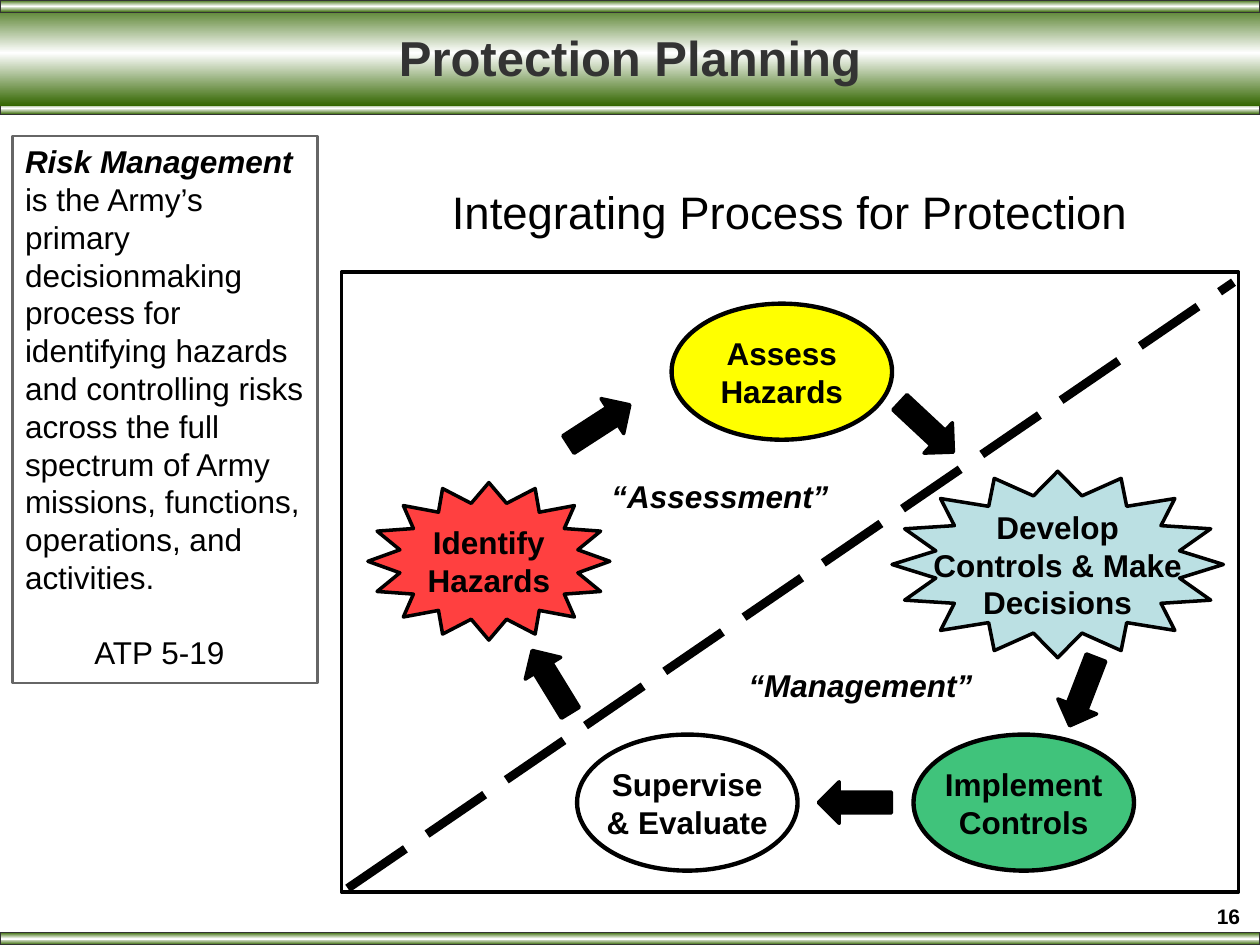
from copy import deepcopy
from dataclasses import dataclass

from lxml import etree
from pptx import Presentation
from pptx.dml.color import RGBColor
from pptx.enum.dml import MSO_LINE
from pptx.enum.shapes import MSO_CONNECTOR, MSO_SHAPE
from pptx.enum.text import MSO_ANCHOR, PP_ALIGN
from pptx.oxml.ns import qn
from pptx.util import Inches, Pt

RECTANGLE, ELLIPSE = MSO_SHAPE.RECTANGLE, MSO_SHAPE.OVAL
STAR, ARROW = MSO_SHAPE.STAR_16_POINT, MSO_SHAPE.DOWN_ARROW
LEFT, CENTER = PP_ALIGN.LEFT, PP_ALIGN.CENTER
TOP, MIDDLE = MSO_ANCHOR.TOP, MSO_ANCHOR.MIDDLE
TITLE_ONLY = 5

BLACK = RGBColor(0x00, 0x00, 0x00)
WHITE = RGBColor(0xFF, 0xFF, 0xFF)
DARK_GREY = RGBColor(0x33, 0x33, 0x33)
GREY = RGBColor(0x66, 0x66, 0x66)
DARK_GREEN = RGBColor(0x33, 0x66, 0x00)
YELLOW = RGBColor(0xFF, 0xFF, 0x00)
RED = RGBColor(0xFF, 0x00, 0x00)
GREEN = RGBColor(0x00, 0xB0, 0x50)
PALE_BLUE = RGBColor(0xBB, 0xE0, 0xE3)

PLAIN = {"name": "Arial", "size": Pt(18), "bold": False, "italic": False}
BOLD = {**PLAIN, "bold": True}
BOLD_ITALIC = {**BOLD, "italic": True}


@dataclass
class Box:
    left: float
    top: float
    width: float
    height: float

    def lengths(self) -> list:
        return [Inches(v) for v in (self.left, self.top, self.width, self.height)]


@dataclass
class Step:
    kind: int
    box: Box
    lines: tuple
    fill: RGBColor | None
    line_width: float
    opacity: int = 100


@dataclass
class Arrow:
    left: float
    top: float
    rotation: float


@dataclass
class Label:
    box: Box
    text: str
    font: dict


BARS = [  # box, outlined
    (Box(0, 0.81, 10, 0.1), True),
    (Box(0, 7.4, 10, 0.1), True),
    (Box(0, 0, 10, 0.84), False),
    (Box(0, 0, 10, 0.1), True),
]
STEPS = [
    Step(ELLIPSE, Box(5.33, 2.41, 1.75, 1.08), ("Assess", "Hazards"), YELLOW, 2.5),
    Step(STAR, Box(2.92, 3.83, 1.92, 1.25), ("Identify", "Hazards"), RED, 2, 75),
    Step(ELLIPSE, Box(4.58, 5.83, 1.75, 1.08), ("Supervise", "& Evaluate"), None, 2.5),
    Step(ELLIPSE, Box(7.25, 5.83, 1.75, 1.08), ("Implement", "Controls"), GREEN, 2.5, 75),
    Step(STAR, Box(7.08, 3.74, 2.63, 1.48),
         ("Develop", "Controls & Make", "Decisions"), PALE_BLUE, 2),
]
ARROWS = [
    Arrow(8.43, 5.2, 21.1),
    Arrow(4.21, 5.12, 148.5),
    Arrow(6.62, 6.08, 90),
    Arrow(4.59, 3.08, 237.1),
    Arrow(7.19, 3.1, 313),
]
LABELS = [
    Label(Box(3.46, 1.41, 5.62, 0.54), "Integrating Process for Protection",
          {**PLAIN, "size": Pt(26)}),
    Label(Box(4.75, 3.74, 1.93, 0.4), "“Assessment”", BOLD_ITALIC),
    Label(Box(5.83, 5.24, 2, 0.4), "“Management”", BOLD_ITALIC),
    Label(Box(9.5, 7.12, 0.5, 0.33), "16", {**BOLD, "size": Pt(12)}),
]


def add_run(paragraph, text: str, font: dict, color: RGBColor = BLACK) -> None:
    run = paragraph.add_run()
    run.text = text
    for name, value in font.items():
        setattr(run.font, name, value)
    run.font.color.rgb = color


def write_lines(frame, lines: tuple, font: dict) -> None:
    """Write centred lines that do not wrap."""
    frame.word_wrap = False
    for index, text in enumerate(lines):
        paragraph = frame.add_paragraph() if index else frame.paragraphs[0]
        paragraph.alignment = CENTER
        add_run(paragraph, text, font)


def add_shape(slide, kind: int, box: Box, fill: RGBColor | None = None,
              line: RGBColor | None = None, line_width: float = 2, opacity: int = 100):
    shape = slide.shapes.add_shape(kind, *box.lengths())
    shape.shadow.inherit = False
    if fill is None:
        shape.fill.background()
    else:
        shape.fill.solid()
        shape.fill.fore_color.rgb = fill
        if opacity < 100:
            color = shape.fill._xPr.find(".//" + qn("a:srgbClr"))
            etree.SubElement(color, qn("a:alpha")).set("val", str(opacity * 1000))
    if line is None:
        shape.line.fill.background()
    else:
        shape.line.color.rgb = line
        shape.line.width = Pt(line_width)
    return shape


def add_bar(slide, box: Box, outlined: bool) -> None:
    """Add a band that runs from green through white to green."""
    bar = add_shape(slide, RECTANGLE, box, line=DARK_GREY if outlined else None,
                    line_width=0.75)
    bar.fill.gradient()
    bar.fill.gradient_angle = 90
    stop_list = bar.fill._xPr.find(".//" + qn("a:gsLst"))
    stop_list.append(deepcopy(stop_list[-1]))
    stops = zip(bar.fill.gradient_stops, (0, 0.5, 1), (DARK_GREEN, WHITE, DARK_GREEN))
    for stop, position, color in stops:
        stop.position = position
        stop.color.rgb = color


def add_risk_box(slide) -> None:
    box = add_shape(slide, RECTANGLE, Box(0.1, 1.08, 2.42, 4.34), line=GREY, line_width=1.5)
    frame = box.text_frame
    frame.word_wrap = True
    frame.vertical_anchor = TOP
    definition, source = frame.paragraphs[0], frame.add_paragraph()
    definition.alignment = source.alignment = LEFT
    add_run(definition, "Risk Management ", BOLD_ITALIC)
    add_run(definition, "is the Army’s primary decisionmaking process for identifying "
            "hazards and controlling risks across the full spectrum of Army missions, "
            "functions, operations, and activities.", PLAIN)
    source.space_before = Pt(21.5)
    source._p.get_or_add_pPr().set("marL", str(Inches(0.55)))
    add_run(source, "ATP 5-19", PLAIN)


def add_title(slide) -> None:
    title = slide.shapes.title
    title.left, title.top, title.width, title.height = Box(0.5, 0.08, 9, 0.75).lengths()
    title.text_frame.vertical_anchor = MIDDLE
    paragraph = title.text_frame.paragraphs[0]
    paragraph.alignment = CENTER
    add_run(paragraph, "Protection Planning", {**BOLD, "size": Pt(28)}, DARK_GREY)
    # Bring the title in front of the header bars
    slide.shapes._spTree.append(title._element)


def add_divider(slide) -> None:
    divider = slide.shapes.add_connector(
        MSO_CONNECTOR.STRAIGHT, Inches(2.76), Inches(7.05), Inches(9.79), Inches(2.24))
    divider.line.color.rgb = BLACK
    divider.line.width = Pt(5)
    divider.line.dash_style = MSO_LINE.LONG_DASH
    etree.SubElement(divider._element.spPr, qn("a:effectLst"))


def main() -> None:
    presentation = Presentation()
    presentation.slide_width, presentation.slide_height = Inches(10), Inches(7.5)
    slide = presentation.slides.add_slide(presentation.slide_layouts[TITLE_ONLY])

    # Header, footer and side text
    for box, outlined in BARS:
        add_bar(slide, box, outlined)
    add_title(slide)
    add_risk_box(slide)

    # Risk management cycle
    add_shape(slide, RECTANGLE, Box(2.71, 2.16, 7.12, 4.92), line=BLACK)
    add_divider(slide)
    for step in STEPS:
        shape = add_shape(slide, step.kind, step.box, step.fill, BLACK,
                          step.line_width, step.opacity)
        shape.text_frame.vertical_anchor = MIDDLE
        write_lines(shape.text_frame, step.lines, BOLD)
    for arrow in ARROWS:
        shape = add_shape(slide, ARROW, Box(arrow.left, arrow.top, 0.33, 0.58), BLACK, BLACK)
        shape.rotation = arrow.rotation

    # Free-standing labels and slide number
    for label in LABELS:
        text_box = slide.shapes.add_textbox(*label.box.lengths())
        write_lines(text_box.text_frame, (label.text,), label.font)

    presentation.save("out.pptx")


if __name__ == "__main__":
    main()
